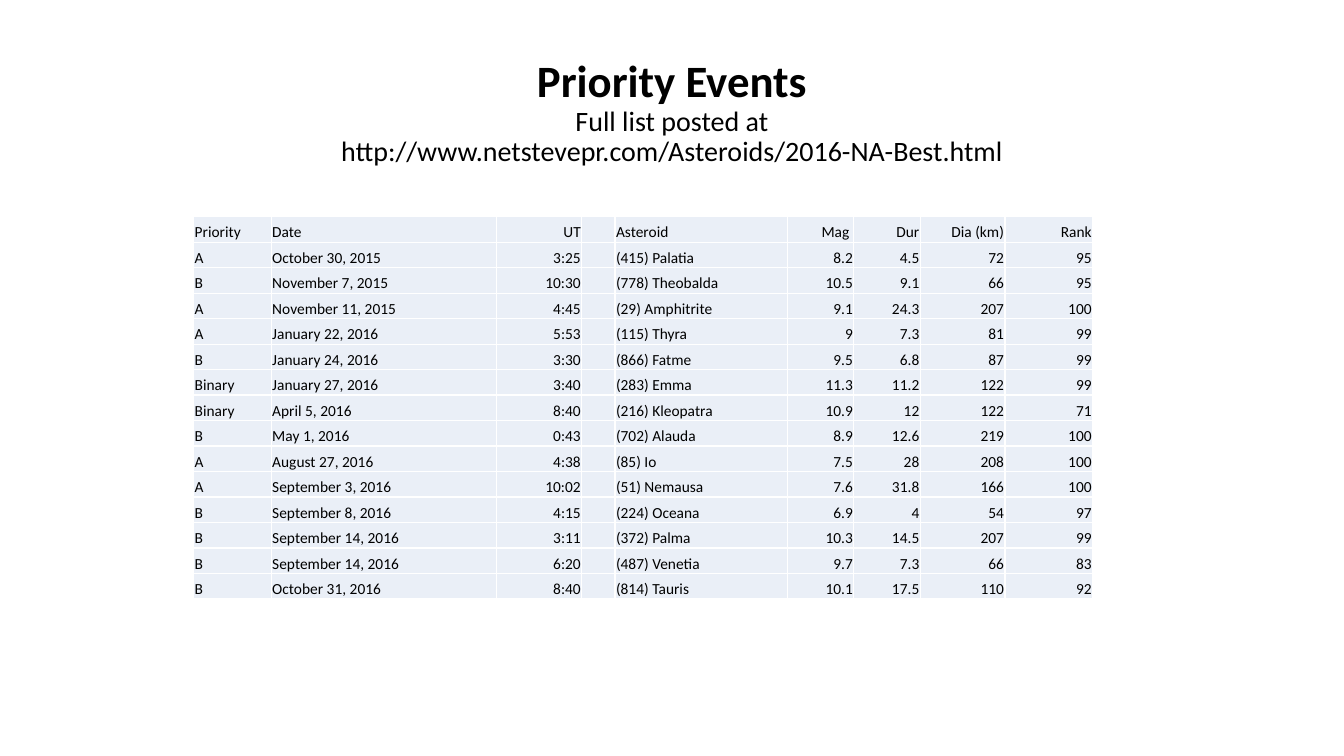
from lxml import etree
from pptx import Presentation
from pptx import util as u
from pptx.dml.color import RGBColor
from pptx.enum import text
from pptx.oxml.ns import qn

FONT = "Calibri"
COLORS = {"text": "000000", "cell": "EAEFF7", "border": "FFFFFF"}
TITLE_LINES = [
    ("Priority Events", 32, True),
    ("Full list posted at", 20, False),
    ("http://www.netstevepr.com/Asteroids/2016-NA-Best.html", 20, False),
]
EVENTS = [
    ("Priority", "Date", "UT", "", "Asteroid", "Mag ", "Dur", "Dia (km)", "Rank"),
    ("A", "October 30, 2015", "3:25", "", "(415) Palatia", "8.2", "4.5", "72", "95"),
    ("B", "November 7, 2015", "10:30", "", "(778) Theobalda", "10.5", "9.1", "66", "95"),
    ("A", "November 11, 2015", "4:45", "", "(29) Amphitrite", "9.1", "24.3", "207", "100"),
    ("A", "January 22, 2016", "5:53", "", "(115) Thyra", "9", "7.3", "81", "99"),
    ("B", "January 24, 2016", "3:30", "", "(866) Fatme", "9.5", "6.8", "87", "99"),
    ("Binary", "January 27, 2016", "3:40", "", "(283) Emma", "11.3", "11.2", "122", "99"),
    ("Binary", "April 5, 2016", "8:40", "", "(216) Kleopatra", "10.9", "12", "122", "71"),
    ("B", "May 1, 2016", "0:43", "", "(702) Alauda", "8.9", "12.6", "219", "100"),
    ("A", "August 27, 2016", "4:38", "", "(85) Io", "7.5", "28", "208", "100"),
    ("A", "September 3, 2016", "10:02", "", "(51) Nemausa", "7.6", "31.8", "166", "100"),
    ("B", "September 8, 2016", "4:15", "", "(224) Oceana", "6.9", "4", "54", "97"),
    ("B", "September 14, 2016", "3:11", "", "(372) Palma", "10.3", "14.5", "207", "99"),
    ("B", "September 14, 2016", "6:20", "", "(487) Venetia", "9.7", "7.3", "66", "83"),
    ("B", "October 31, 2016", "8:40", "", "(814) Tauris", "10.1", "17.5", "110", "92"),
]
COLUMN_WIDTHS = [55.4, 160.6, 61.2, 23.8, 123.1, 47.5, 47.5, 60.5, 62.6]
LEFT_COLUMNS = {0, 1, 4}
ROW_HEIGHT = 18.2
CELL_SIZE = 11


def add_span(para, words, size, bold=False):
    span = para.add_run()
    span.text = words
    span.font.name = FONT
    span.font.size = u.Pt(size)
    span.font.bold = bold
    span.font.color.rgb = RGBColor.from_string(COLORS["text"])


def add_borders(cell):
    properties = cell._tc.get_or_add_tcPr()
    for side in ("lnL", "lnR", "lnT", "lnB"):
        line = etree.SubElement(properties, qn(f"a:{side}"), w=str(u.Pt(1)))
        fill = etree.SubElement(line, qn("a:solidFill"))
        etree.SubElement(fill, qn("a:srgbClr"), val=COLORS["border"])


def fill_cell(cell, words, align):
    add_borders(cell)
    cell.fill.solid()
    cell.fill.fore_color.rgb = RGBColor.from_string(COLORS["cell"])
    cell.margin_left = cell.margin_right = cell.margin_top = u.Pt(0.7)
    cell.margin_bottom = 0
    cell.vertical_anchor = text.MSO_ANCHOR.BOTTOM
    para = cell.text_frame.paragraphs[0]
    para.alignment = align
    if words:
        add_span(para, words, CELL_SIZE)
    else:
        etree.SubElement(para._p, qn("a:endParaRPr"), sz=str(CELL_SIZE * 100))


def add_title(page):
    box = page.shapes.title
    box.left, box.top, box.width, box.height = map(u.Pt, (66, 28.75, 828, 104.4))
    frame = box.text_frame
    frame.word_wrap = True
    frame.auto_size = text.MSO_AUTO_SIZE.NONE
    frame.vertical_anchor = text.MSO_ANCHOR.MIDDLE
    para = frame.paragraphs[0]
    para.alignment = text.PP_ALIGN.CENTER
    para.line_spacing = 0.9
    for index, (words, size, bold) in enumerate(TITLE_LINES):
        if index:
            para.add_line_break()
        add_span(para, words, size, bold)


def add_events(page):
    frame = page.shapes.add_table(
        len(EVENTS), len(COLUMN_WIDTHS), u.Pt(138.4), u.Pt(154.8),
        u.Pt(sum(COLUMN_WIDTHS)), u.Pt(ROW_HEIGHT * len(EVENTS)))
    table = frame.table
    table.first_row = table.horz_banding = False
    for column, width in zip(table.columns, COLUMN_WIDTHS):
        column.width = u.Pt(width)
    for row, event in zip(table.rows, EVENTS):
        row.height = u.Pt(ROW_HEIGHT)
        for index, (cell, words) in enumerate(zip(row.cells, event)):
            align = text.PP_ALIGN.LEFT if index in LEFT_COLUMNS else text.PP_ALIGN.RIGHT
            fill_cell(cell, words, align)


def main():
    deck = Presentation()
    deck.slide_width, deck.slide_height = u.Pt(960), u.Pt(540)
    page = deck.slides.add_slide(deck.slide_layouts.get_by_name("Title Only"))
    add_title(page)
    add_events(page)
    deck.save("out.pptx")


if __name__ == "__main__":
    main()
